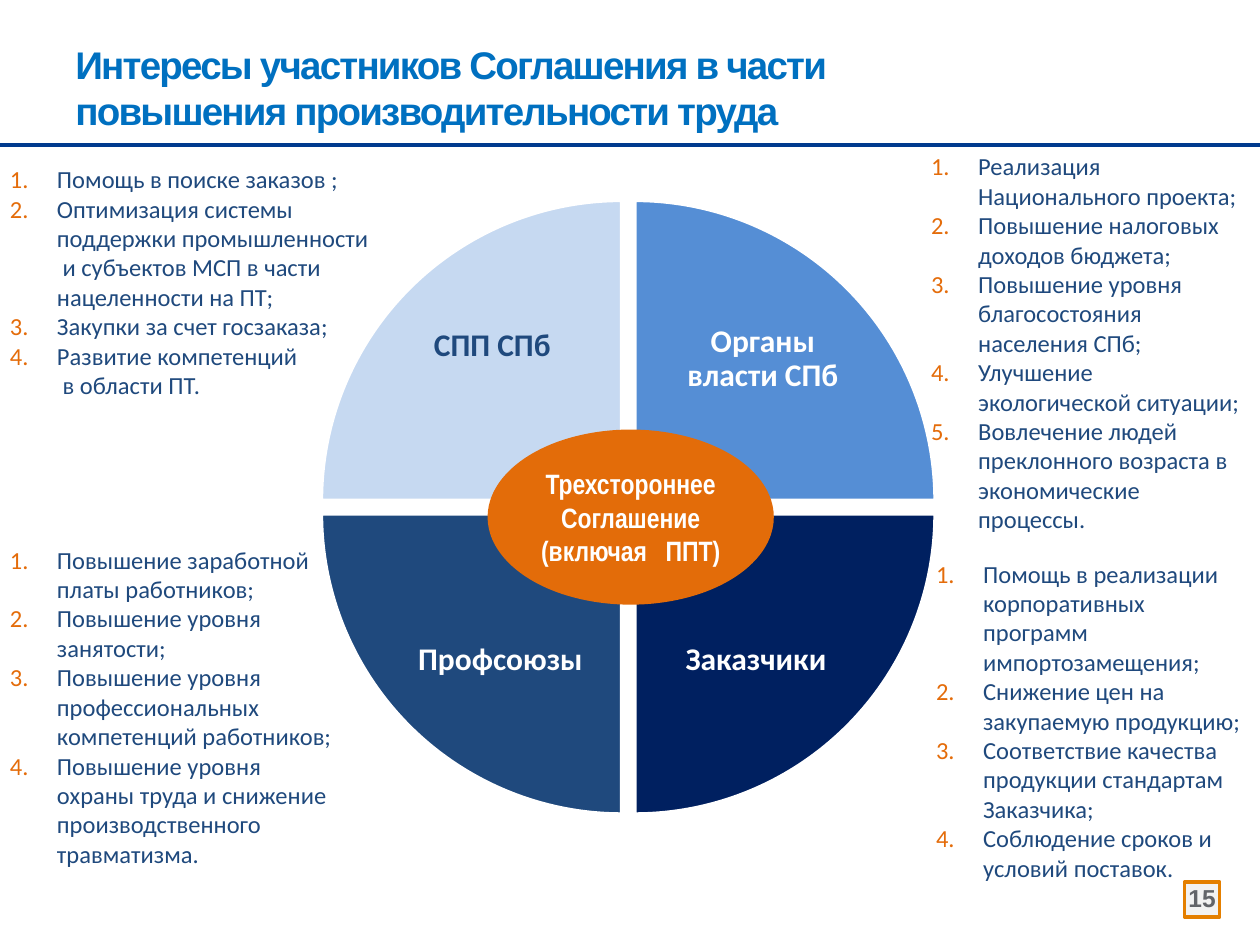
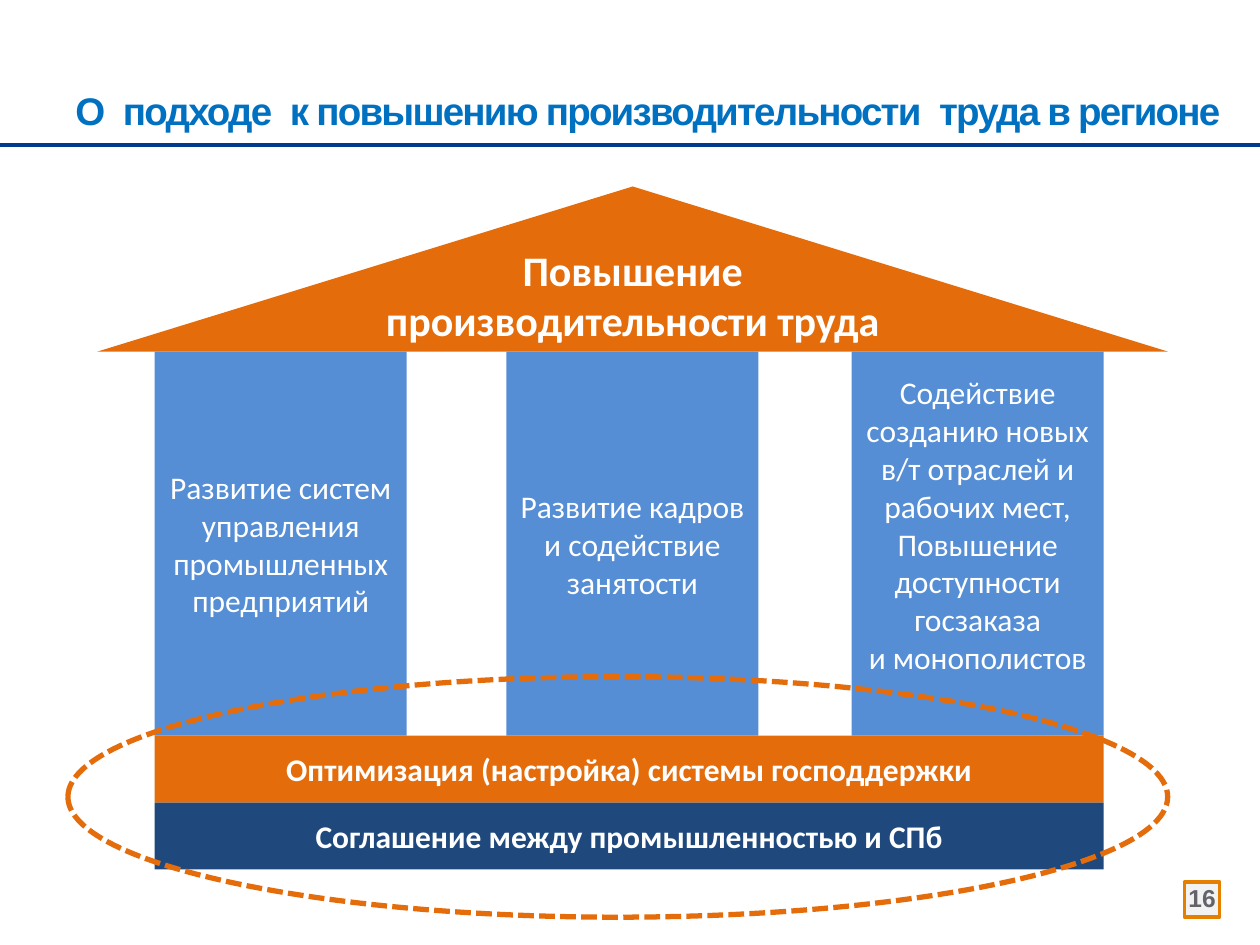
from typing import NamedTuple, Optional, Sequence

from pptx import Presentation
from pptx.dml.color import RGBColor
from pptx.enum.dml import MSO_LINE
from pptx.enum.shapes import MSO_CONNECTOR, MSO_SHAPE
from pptx.enum.text import MSO_ANCHOR, PP_ALIGN
from pptx.oxml.ns import qn
from pptx.oxml.xmlchemy import OxmlElement
from pptx.util import Cm, Pt

RECT = MSO_SHAPE.RECTANGLE
OVAL = MSO_SHAPE.OVAL
TRIANGLE = MSO_SHAPE.ISOSCELES_TRIANGLE
WEDGE = MSO_SHAPE.PIE_WEDGE
STRAIGHT = MSO_CONNECTOR.STRAIGHT
DASH = MSO_LINE.SQUARE_DOT
LEFT, CENTER = PP_ALIGN.LEFT, PP_ALIGN.CENTER
TOP, MIDDLE, BOTTOM = MSO_ANCHOR.TOP, MSO_ANCHOR.MIDDLE, MSO_ANCHOR.BOTTOM

WHITE, NAVY, BLUE = "FFFFFF", "1F497D", "558ED5"
ORANGE, DEEP_ORANGE = "E46C0A", "E36C09"
PALE_BLUE, MIDNIGHT = "C6D9F1", "002060"
TITLE_BLUE, RULE_BLUE = "0070C0", "003A8E"
BADGE_FILL, BADGE_LINE, BADGE_TEXT = "F2F2F2", "E47F00", "626469"

SLIDE_W, SLIDE_H = 25.4, 19.05
RULE_Y = 2.92
LIST_INDENT = 0.95
WIDE_GAP = "‖"


class Box(NamedTuple):
    """Left, top, width and height in centimetres."""
    x: float
    y: float
    w: float
    h: float


class Inset(NamedTuple):
    """Text margins in centimetres."""
    left: float = 0.25
    top: float = 0.13
    right: float = 0.25
    bottom: float = 0.13


class Style(NamedTuple):
    """Character format; tracking and gap are extra points per letter."""
    size: float
    color: str
    bold: bool = False
    font: str = "Calibri"
    tracking: float = 0
    gap: float = 0


class Layout(NamedTuple):
    """Placing of text in its frame."""
    align: PP_ALIGN = CENTER
    anchor: MSO_ANCHOR = MIDDLE
    inset: Inset = Inset()
    spacing: Optional[float] = None
    wrap: bool = True
    numbered: bool = False


class Outline(NamedTuple):
    """Line of a shape."""
    color: str
    width: float
    dash: Optional[MSO_LINE] = None


class Sector(NamedTuple):
    """Quarter of the wheel with its label."""
    label: str
    col: int
    row: int
    rotation: int
    fill: str
    color: str
    inset: Inset


class Interests(NamedTuple):
    """Numbered list beside a quarter."""
    box: Box
    items: Sequence[str]


class Column(NamedTuple):
    """Pillar of the house."""
    x: float
    lines: Sequence[str]
    inset: Inset = Inset()


class Bar(NamedTuple):
    """Step of the foundation."""
    text: str
    fill: str


TITLE = Style(22, TITLE_BLUE, True, "Arial", -1, 4)
BADGE = Style(14, BADGE_TEXT, True, "Arial")
HUB = Style(16, WHITE, True, "Arial Narrow", 0, 7)
ITEM = Style(14, NAVY)
BODY = Style(18, WHITE)
STRONG = Style(18, WHITE, True)
ROOF = Style(24, WHITE, True)

WEDGE_SIZE, WEDGE_PITCH, LABEL_SIZE = 6.05, 6.32, 4.27
WHEEL_X, WHEEL_Y = 6.48, 4.04
SECTORS = [
    Sector("СПП СПб", 0, 0, 0, PALE_BLUE, NAVY, Inset(0.36, 0.36, 1.3, 2.31)),
    Sector("Органы власти СПб", 1, 0, 90, BLUE, WHITE, Inset(0.89, 0.36, 0, 1.8)),
    Sector("Заказчики", 1, 1, 180, MIDNIGHT, WHITE, Inset(0.61, 2.01, 0, 0.36)),
    Sector("Профсоюзы", 0, 1, 270, NAVY, WHITE, Inset(0, 2.01, 0.61, 0.36)),
]
INTERESTS = [
    Interests(Box(0, 10.85, 7.16, 6.83), [
        "Повышение заработной платы работников;",
        "Повышение уровня занятости;",
        "Повышение уровня профессиональных компетенций работников;",
        "Повышение уровня охраны труда и снижение производственного травматизма.",
    ]),
    Interests(Box(18.57, 2.92, 6.73, 8.03), [
        "Реализация Национального проекта;",
        "Повышение налоговых доходов бюджета;",
        "Повышение уровня благосостояния населения СПб;",
        "Улучшение экологической ситуации;",
        "Вовлечение людей преклонного возраста в экономические процессы.",
    ]),
    Interests(Box(18.67, 11.13, 6.73, 6.83), [
        "Помощь в реализации корпоративных программ импортозамещения;",
        "Снижение цен на закупаемую продукцию;",
        "Соответствие качества продукции стандартам Заказчика;",
        "Соблюдение сроков и условий поставок.",
    ]),
    Interests(Box(0, 3.18, 8.61, 5.05), [
        "Помощь в поиске заказов ;",
        "Оптимизация системы поддержки промышленности\n"
        " и субъектов МСП в части нацеленности на ПТ;",
        "Закупки за счет госзаказа;",
        "Развитие компетенций\n в области ПТ.",
    ]),
]

HOUSE_X, HOUSE_W, COLUMN_W = 3.12, 19.13, 5.08
COLUMN_Y, BARS_Y, BAR_H = 7.09, 14.83, 1.35
COLUMNS = [
    Column(HOUSE_X, ["Развитие систем управления", "промышленных предприятий"]),
    Column(10.21, ["Развитие кадров и содействие занятости"]),
    Column(HOUSE_X + HOUSE_W - COLUMN_W, [
        "Содействие созданию новых в/т отраслей и рабочих мест,",
        "Повышение доступности госзаказа",
        "и монополистов",
    ], Inset(bottom=0.9)),
]
BARS = [
    Bar("Оптимизация (настройка) системы господдержки", ORANGE),
    Bar("Соглашение между промышленностью и СПб", NAVY),
]


def rgb(value: str) -> RGBColor:
    """Turn a hex string into a colour."""
    return RGBColor.from_string(value)


def add_run(p, text: str, style: Style, tracking: float) -> None:
    """Add one formatted run."""
    r = p.add_run()
    r.text = text
    r.font.size = Pt(style.size)
    r.font.name = style.font
    r.font.bold = style.bold
    r.font.color.rgb = rgb(style.color)
    if tracking:
        r.font._element.set("spc", str(round(tracking * 100)))


def add_number(p) -> None:
    """Give a paragraph an orange number and a hanging indent."""
    pPr = p._p.get_or_add_pPr()
    pPr.set("marL", str(Cm(LIST_INDENT)))
    pPr.set("indent", str(-Cm(LIST_INDENT)))
    bu_color = OxmlElement("a:buClr")
    color = OxmlElement("a:srgbClr")
    color.set("val", ORANGE)
    bu_color.append(color)
    number = OxmlElement("a:buAutoNum")
    number.set("type", "arabicPeriod")
    pPr.extend([bu_color, number])


def write(sp, lines: Sequence[str], style: Style, layout: Layout = Layout()) -> None:
    """Fill a frame with paragraphs."""
    tf = sp.text_frame
    tf.word_wrap = layout.wrap
    tf.vertical_anchor = layout.anchor
    tf.margin_left, tf.margin_top, tf.margin_right, tf.margin_bottom = map(Cm, layout.inset)
    for i, line in enumerate(lines):
        p = tf.add_paragraph() if i else tf.paragraphs[0]
        p.alignment = layout.align
        if layout.spacing:
            p.line_spacing = layout.spacing
        if layout.numbered:
            add_number(p)
        for j, row in enumerate(line.split("\n")):
            if j:
                p.add_line_break()
            for k, part in enumerate(row.split(WIDE_GAP)):
                if k:
                    add_run(p, " ", style, style.gap)
                add_run(p, part, style, style.tracking)


def add_text(s, box: Box, lines: Sequence[str], style: Style, layout: Layout) -> None:
    """Add a text box."""
    write(s.shapes.add_textbox(*map(Cm, box)), lines, style, layout)


def add_figure(s, kind: MSO_SHAPE, box: Box, fill: Optional[str] = None,
               outline: Optional[Outline] = None):
    """Add a flat preset shape."""
    sp = s.shapes.add_shape(kind, *map(Cm, box))
    sp.shadow.inherit = False
    if fill:
        sp.fill.solid()
        sp.fill.fore_color.rgb = rgb(fill)
    else:
        sp.fill.background()
    if outline:
        sp.line.color.rgb = rgb(outline.color)
        sp.line.width = Pt(outline.width)
        if outline.dash:
            sp.line.dash_style = outline.dash
    else:
        sp.line.fill.background()
    return sp


def add_page(prs, title: str, title_w: float, number: int):
    """Add a slide with its rule, number badge and title."""
    s = prs.slides.add_slide(prs.slide_layouts[6])
    rule = s.shapes.add_connector(STRAIGHT, 0, Cm(RULE_Y), Cm(SLIDE_W), Cm(RULE_Y))
    rule.line.color.rgb = rgb(RULE_BLUE)
    rule.line.width = Pt(2.5)
    rule._element.find(qn("p:spPr")).append(OxmlElement("a:effectLst"))
    badge = add_figure(s, RECT, Box(23.88, 17.78, 0.71, 0.71), BADGE_FILL,
                       Outline(BADGE_LINE, 2))
    write(badge, [str(number)], BADGE,
          Layout(inset=Inset(0.2, 0.2, 0.2, 0.2), spacing=0.9, wrap=False))
    add_text(s, Box(1.27, 0.66, title_w, 2.16), [title], TITLE, Layout(LEFT, BOTTOM))
    return s


def build_interests(prs) -> None:
    """Draw the wheel of parties with their interests."""
    s = add_page(prs, "Интересы участников Соглашения в части "
                 "повышения производительности труда", 19.2, 15)
    inner = WEDGE_SIZE - LABEL_SIZE
    for sector in SECTORS:
        x = WHEEL_X + sector.col * WEDGE_PITCH
        y = WHEEL_Y + sector.row * WEDGE_PITCH
        wedge = add_figure(s, WEDGE, Box(x, y, WEDGE_SIZE, WEDGE_SIZE), sector.fill,
                           Outline(WHITE, 2))
        wedge.rotation = sector.rotation
        label = Box(x + inner * (1 - sector.col), y + inner * (1 - sector.row),
                    LABEL_SIZE, LABEL_SIZE)
        add_text(s, label, [sector.label], STRONG._replace(color=sector.color),
                 Layout(inset=sector.inset, spacing=0.9))
    hub = add_figure(s, OVAL, Box(9.83, 8.66, 5.77, 3.53), DEEP_ORANGE)
    write(hub, ["Трехстороннее Соглашение", f"(включая{WIDE_GAP}ППТ)"], HUB,
          Layout(inset=Inset(0, 0, 0, 0)))
    for interests in INTERESTS:
        add_text(s, interests.box, interests.items, ITEM,
                 Layout(LEFT, TOP, Inset(left=0.2), numbered=True))


def build_house(prs) -> None:
    """Draw the house of regional productivity."""
    title = WIDE_GAP.join(["О", "подходе", "к повышению производительности",
                           "труда в регионе"])
    s = add_page(prs, title, 23.75, 16)
    for column in COLUMNS:
        sp = add_figure(s, RECT, Box(column.x, COLUMN_Y, COLUMN_W, BARS_Y - COLUMN_Y), BLUE)
        write(sp, column.lines, BODY, Layout(inset=column.inset))
    for i, bar in enumerate(BARS):
        sp = add_figure(s, RECT, Box(HOUSE_X, BARS_Y + i * BAR_H, HOUSE_W, BAR_H), bar.fill)
        write(sp, [bar.text], STRONG)
    roof = add_figure(s, TRIANGLE, Box(1.96, 3.76, 21.59, 3.33), ORANGE)
    write(roof, ["Повышение производительности труда"], ROOF, Layout(inset=Inset(bottom=0.76)))
    add_figure(s, OVAL, Box(1.37, 13.64, 22.17, 4.85), outline=Outline(ORANGE, 3, DASH))


def main() -> None:
    """Build and save the presentation."""
    prs = Presentation()
    prs.slide_width, prs.slide_height = Cm(SLIDE_W), Cm(SLIDE_H)
    build_interests(prs)
    build_house(prs)
    prs.save("out.pptx")


if __name__ == "__main__":
    main()
